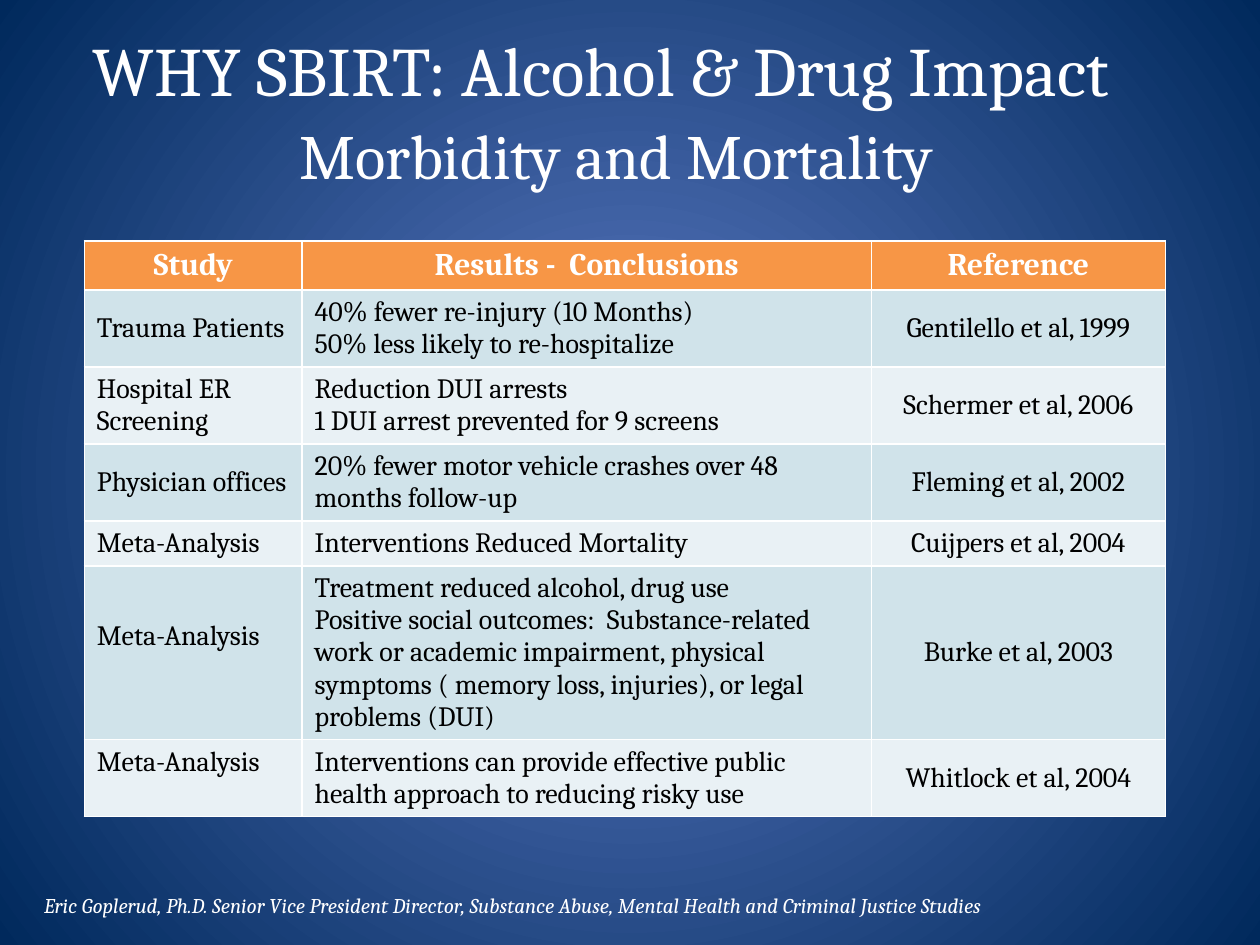
from lxml import etree
from pptx import Presentation
from pptx import util as u
from pptx.dml.color import RGBColor
from pptx.enum import text
from pptx.oxml import parse_xml
from pptx.oxml.ns import nsdecls, qn


def colour(hex_string):
    return RGBColor.from_string(hex_string)


def style(font, size, hex_string, bold=False, italic=False):
    font.name = "Cambria"
    font.size = u.Pt(size)
    font.color.rgb = colour(hex_string)
    font.bold = bold
    font.italic = italic


deck = Presentation()
deck.slide_width, deck.slide_height = u.Cm(25.4), u.Cm(19.05)
slide = deck.slides.add_slide(deck.slide_layouts[5])

# Background: radial gradient, light in the centre
background = slide.background.fill
background.gradient()
for stop, shade in zip(background.gradient_stops, ("5E7CC5", "00295C")):
    stop.color.rgb = colour(shade)
gradient = slide.background._cSld.find(".//" + qn("a:gradFill"))
gradient.replace(gradient.find(qn("a:lin")), parse_xml(
    f'<a:path {nsdecls("a")} path="circle">'
    '<a:fillToRect l="50000" t="50000" r="50000" b="50000"/></a:path>'))

# Title in two lines
title = slide.shapes.title
title.left, title.top, title.width, title.height = u.Cm(0.84), u.Cm(0.64), u.Cm(22.86), u.Cm(3.18)
title.text_frame.auto_size = text.MSO_AUTO_SIZE.NONE
title.text_frame.vertical_anchor = text.MSO_ANCHOR.MIDDLE
heading = title.text_frame.paragraphs[0]
heading.alignment = text.PP_ALIGN.CENTER
heading.text = "WHY SBIRT: Alcohol & Drug Impact \v "
subheading = heading.add_run()
subheading.text = "Morbidity and Mortality"
for run in heading.runs:
    style(run.font, 39.6, "FFFFFF")
subheading.font.size = u.Pt(36)

# Table of studies
studies = [
    ("Study", "Results -  Conclusions", "Reference"),
    ("Trauma Patients", "40% fewer re-injury (10 Months)\n50% less likely to re-hospitalize",
     "Gentilello et al, 1999"),
    ("Hospital ER Screening", "Reduction DUI arrests\n1 DUI arrest prevented for 9 screens",
     "Schermer et al, 2006"),
    ("Physician offices", "20% fewer motor vehicle crashes over 48 months follow-up",
     "Fleming et al, 2002"),
    ("Meta-Analysis", "Interventions Reduced Mortality", "Cuijpers et al, 2004"),
    ("Meta-Analysis", "Treatment reduced alcohol, drug use\nPositive social outcomes:  "
     "Substance-related work or academic impairment, physical symptoms "
     "( memory loss, injuries), or legal problems (DUI)", "Burke et al, 2003"),
    ("Meta-Analysis", "Interventions can provide effective public health approach "
     "to reducing risky use", "Whitlock et al, 2004"),
]
row_heights = (0.99, 1.55, 1.55, 1.55, 0.91, 3.48, 1.55)
column_widths = (4.39, 11.48, 5.92)
table = slide.shapes.add_table(
    len(studies), 3, u.Cm(1.7), u.Cm(4.86),
    u.Cm(sum(column_widths)), u.Cm(sum(row_heights))).table
for column, width in zip(table.columns, column_widths):
    column.width = u.Cm(width)

for r, (study, height) in enumerate(zip(studies, row_heights)):
    table.rows[r].height = u.Cm(height)
    header = r == 0
    band = "F79646" if header else "D0E3EA" if r % 2 else "E9F1F5"
    for c, wording in enumerate(study):
        cell = table.cell(r, c)
        cell.text = wording
        cell.vertical_anchor = text.MSO_ANCHOR.MIDDLE
        cell.fill.solid()
        cell.fill.fore_color.rgb = colour(band)
        for line in cell.text_frame.paragraphs:
            if header or c == 2:
                line.alignment = text.PP_ALIGN.CENTER
            style(line.font, 18 if header else 16, "FFFFFF" if header else "000000", header)

# The last two study names sit above the middle of their rows
for r in (5, 6):
    table.cell(r, 0).margin_bottom = u.Cm(0.78)

# Source line
source = slide.shapes.add_textbox(u.Cm(0.64), u.Cm(17.86), u.Cm(23.29), u.Cm(0.76)).text_frame
source.word_wrap = True
source.text = ("Eric Goplerud, Ph.D. Senior Vice President Director, Substance Abuse, "
               "Mental Health and Criminal Justice Studies")
style(source.paragraphs[0].font, 12, "FFFFFF", italic=True)

deck.save("out.pptx")
